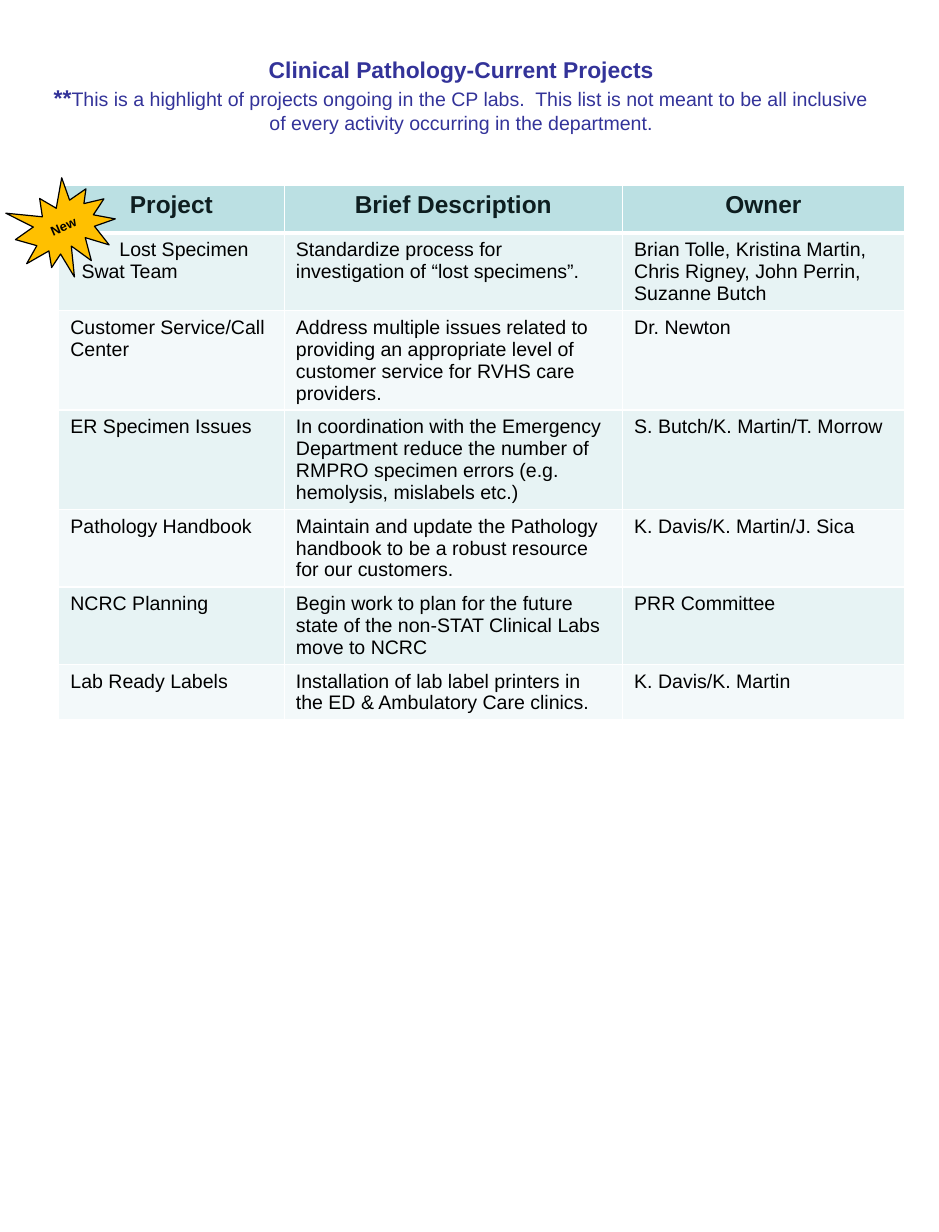
import pptx
import pptx.dml.color
import pptx.enum.shapes
import pptx.enum.text
import pptx.oxml
import pptx.oxml.ns
import pptx.util

Cm = pptx.util.Cm
Pt = pptx.util.Pt
RGBColor = pptx.dml.color.RGBColor
ALIGN = pptx.enum.text.PP_ALIGN
ANCHOR = pptx.enum.text.MSO_ANCHOR

BLACK = RGBColor(0x00, 0x00, 0x00)
WHITE = RGBColor(0xFF, 0xFF, 0xFF)
NAVY = RGBColor(0x33, 0x33, 0x99)
DARK_TEAL = RGBColor(0x0E, 0x1E, 0x20)
HEADER_TEAL = RGBColor(0xBB, 0xE0, 0xE3)
BAND_TEAL = RGBColor(0xE7, 0xF3, 0xF4)
PALE_TEAL = RGBColor(0xF3, 0xF9, 0xFA)
AMBER = RGBColor(0xFF, 0xC0, 0x00)

HEADINGS = ["Project", "Brief Description", "Owner"]
PROJECTS = [
    ("Lost Specimen Swat Team",
     "Standardize process for investigation of “lost specimens”.",
     "Brian Tolle, Kristina Martin, Chris Rigney, John Perrin, Suzanne Butch"),
    ("Customer Service/Call Center",
     "Address multiple issues related to providing an appropriate level of "
     "customer service for RVHS care providers.",
     "Dr. Newton"),
    ("ER Specimen Issues",
     "In coordination with the Emergency Department reduce the number of "
     "RMPRO specimen errors (e.g. hemolysis, mislabels etc.)",
     "S. Butch/K. Martin/T. Morrow"),
    ("Pathology Handbook",
     "Maintain and update the Pathology handbook to be a robust resource "
     "for our customers.",
     "K. Davis/K. Martin/J. Sica"),
    ("NCRC Planning",
     "Begin work to plan for the future state of the non-STAT Clinical Labs "
     "move to NCRC",
     "PRR Committee"),
    ("Lab Ready Labels",
     "Installation of lab label printers in the ED & Ambulatory Care clinics.",
     "K. Davis/K. Martin"),
]


def write(paragraph, text, size=12, color=BLACK, bold=False, align=ALIGN.LEFT,
          font="Arial"):
    """Add one formatted run to a paragraph."""
    paragraph.alignment = align
    run = paragraph.add_run()
    run.text = text
    run.font.name = font
    run.font.size = Pt(size)
    run.font.bold = bold
    run.font.color.rgb = color


class ProjectSheet:
    """Style and element builders for the current slide."""

    row_height = Cm(1.04)
    column_widths = [Cm(4.88), Cm(7.32), Cm(6.1)]

    def __init__(self, slide):
        self.slide = slide

    def heading(self, left, top, width, height, lines):
        """Centred lines, each a list of (text, size, bold) pieces."""
        frame = self.slide.shapes.add_textbox(left, top, width, height).text_frame
        frame.word_wrap = True
        frame.vertical_anchor = ANCHOR.TOP
        frame.margin_top = Cm(0.78)
        for index, pieces in enumerate(lines):
            paragraph = frame.add_paragraph() if index else frame.paragraphs[0]
            for text, size, bold in pieces:
                write(paragraph, text, size=size, bold=bold, color=NAVY,
                      align=ALIGN.CENTER)

    def borders(self, cell, bottom):
        properties = cell._tc.get_or_add_tcPr()
        for side, points in (("L", 1), ("R", 1), ("T", 1), ("B", bottom)):
            properties.append(pptx.oxml.parse_xml(
                f'<a:ln{side} {pptx.oxml.ns.nsdecls("a")} w="{Pt(points)}">'
                f'<a:solidFill><a:srgbClr val="{WHITE}"/></a:solidFill>'
                f'</a:ln{side}>'))

    def cell(self, cell, text, fill, bottom=1, **text_format):
        self.borders(cell, bottom)
        cell.fill.solid()
        cell.fill.fore_color.rgb = fill
        write(cell.text_frame.paragraphs[0], text, **text_format)

    def table(self, left, top, headings, rows):
        row_count = len(rows) + 1
        table = self.slide.shapes.add_table(
            row_count, len(headings), left, top, sum(self.column_widths),
            self.row_height * row_count).table
        for column, width in zip(table.columns, self.column_widths):
            column.width = width
        for column, text in enumerate(headings):
            self.cell(table.cell(0, column), text, HEADER_TEAL, bottom=3,
                      size=15, color=DARK_TEAL, bold=True, align=ALIGN.CENTER)
        for row, texts in enumerate(rows, start=1):
            fill = BAND_TEAL if row % 2 else PALE_TEAL
            for column, text in enumerate(texts):
                self.cell(table.cell(row, column), text, fill)
        return table

    def indent(self, paragraph, left, first_line):
        properties = paragraph._p.get_or_add_pPr()
        properties.set("marL", str(left))
        properties.set("indent", str(first_line))

    def burst(self, left, top, width, height, text, rotation):
        shape = self.slide.shapes.add_shape(
            pptx.enum.shapes.MSO_SHAPE.EXPLOSION1, left, top, width, height)
        shape.shadow.inherit = False
        shape.rotation = rotation
        shape.fill.solid()
        shape.fill.fore_color.rgb = AMBER
        shape.line.color.rgb = BLACK
        shape.line.width = Pt(0.75)
        frame = shape.text_frame
        frame.margin_left = frame.margin_right = 0
        frame.vertical_anchor = ANCHOR.MIDDLE
        write(frame.paragraphs[0], text, size=8, bold=True, align=ALIGN.CENTER)


def main():
    presentation = pptx.Presentation()
    presentation.slide_width = Cm(20.32)
    presentation.slide_height = Cm(26.67)
    sheet = ProjectSheet(presentation.slides.add_slide(presentation.slide_layouts[6]))

    # Project table, with the first entry indented clear of the burst
    table = sheet.table(Cm(1.27), Cm(4.01), HEADINGS, PROJECTS)
    sheet.indent(table.cell(1, 0).text_frame.paragraphs[0], Cm(0.24), Cm(0.82))

    # Title and note
    sheet.heading(Cm(0.84), Cm(0.43), Cm(18.29), Cm(2.54), [
        [("Clinical Pathology-Current Projects", 14, True)],
        [("**", 14, True),
         ("This is a highlight of projects ongoing in the CP labs.  This list is "
          "not meant to be all inclusive of every activity occurring in the "
          "department.", 12, False)],
    ])

    # Marker for the new project
    sheet.burst(Cm(0.33), Cm(3.91), Cm(2.16), Cm(2.08), "New", 336.5)

    presentation.save("out.pptx")


if __name__ == "__main__":
    main()
